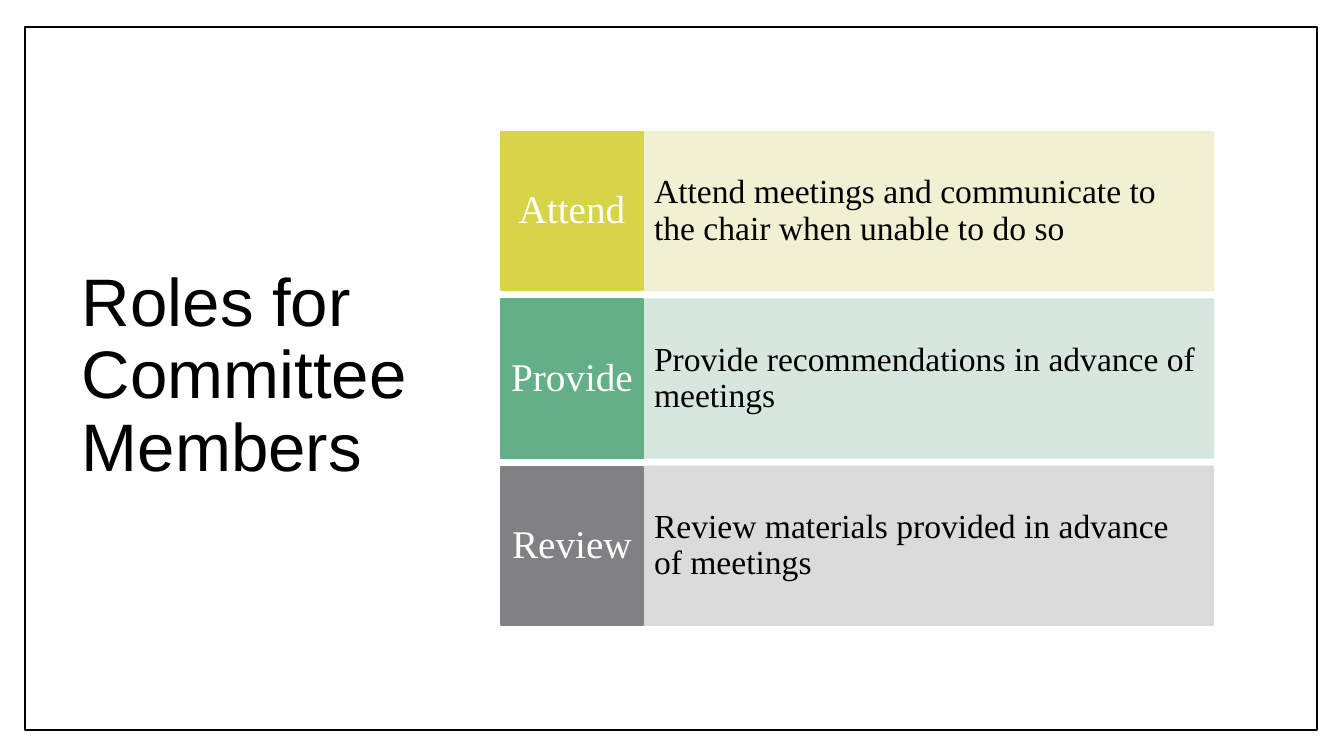
from dataclasses import dataclass

from lxml.etree import SubElement
from pptx import Presentation
from pptx.dml.color import RGBColor as RGB
from pptx.enum.shapes import MSO_SHAPE as Shape
from pptx.enum.text import MSO_ANCHOR as Anchor, MSO_AUTO_SIZE as Fit, PP_ALIGN as Align
from pptx.oxml.ns import qn
from pptx.util import Pt

EMU = 914400 / 100.8  # one px


@dataclass(frozen=True)
class Theme:
    ink: str = "000000"
    paper: str = "FFFFFF"
    head: str = "Arial"
    body: str = "Times New Roman"
    title: int = 48
    label: int = 28
    note: int = 24


THEME = Theme()

ROLES = [
    ("Attend", "Attend meetings and communicate to the chair when unable to do so",
     "D7D447", "F0EFCF"),
    ("Provide", "Provide recommendations in advance of meetings",
     "62AF88", "D3E5DC"),
    ("Review", "Review materials provided in advance of meetings",
     "818183", "D8D8D9"),
]


def px(n):
    return round(n * EMU)


def paint(color, hue, alpha):
    color.rgb = RGB.from_string(hue)
    return alpha


def fade(shape, alpha):
    """Make the fill and line colours partly transparent, alpha in percent."""
    for node in list(shape._element.spPr.iter(qn("a:srgbClr"))):
        SubElement(node, qn("a:alpha"), val=str(alpha * 1000))


def rect(slide, box, fill, line, width):
    shape = slide.shapes.add_shape(Shape.RECTANGLE, *map(px, box))
    shape.shadow.inherit = False
    shape.fill.solid()
    shape.fill.fore_color.rgb = RGB.from_string(fill)
    shape.line.color.rgb = RGB.from_string(line)
    shape.line.width = Pt(width)
    return shape


def write(shape, text, font, size, color, align=Align.LEFT, pad=(10, 5)):
    frame = shape.text_frame
    frame.word_wrap = True
    frame.auto_size = Fit.NONE
    frame.vertical_anchor = Anchor.MIDDLE
    frame.margin_left = frame.margin_right = px(pad[0])
    frame.margin_top = frame.margin_bottom = px(pad[1])
    para = frame.paragraphs[0]
    para.alignment = align
    para.line_spacing = 0.9
    run = para.add_run()
    run.text = text
    run.font.name = font
    run.font.size = Pt(size)
    run.font.color.rgb = RGB.from_string(color)


def add_title(slide, box, text):
    title = slide.shapes.title
    title.left, title.top, title.width, title.height = map(px, box)
    write(title, text, THEME.head, THEME.title, THEME.ink)


def add_role(slide, box, role):
    """Place a pale note with its solid label, a fifth of the width, at the left."""
    left, top, width, height = box
    name, text, dark, pale = role
    side = width // 5
    note = rect(slide, (left + side, top, width - side, height), pale, pale, 1.5)
    fade(note, 90)
    write(note, text, THEME.body, THEME.note, THEME.ink, pad=(11, 40))
    label = rect(slide, (left, top, side, height), dark, dark, 1.5)
    write(label, name, THEME.body, THEME.label, THEME.paper, Align.CENTER, (7, 15))


def add_roles(slide, box, roles, gap):
    left, top, width, height = box
    tall = (height - gap * (len(roles) - 1)) / len(roles)
    for i, role in enumerate(roles):
        add_role(slide, (left, top + i * (tall + gap), width, tall), role)


def main():
    deck = Presentation()
    deck.slide_width, deck.slide_height = px(1344), px(756)
    slide = deck.slides.add_slide(deck.slide_layouts[5])
    border = rect(slide, (25, 27, 1292, 703), THEME.paper, THEME.ink, 1)
    tree = slide.shapes._spTree
    tree.remove(border._element)
    tree.insert(2, border._element)  # behind the title
    add_title(slide, (72, 68, 371, 618), "Roles for Committee Members")
    add_roles(slide, (501, 132, 712, 493), ROLES, 9)
    deck.save("out.pptx")


if __name__ == "__main__":
    main()
